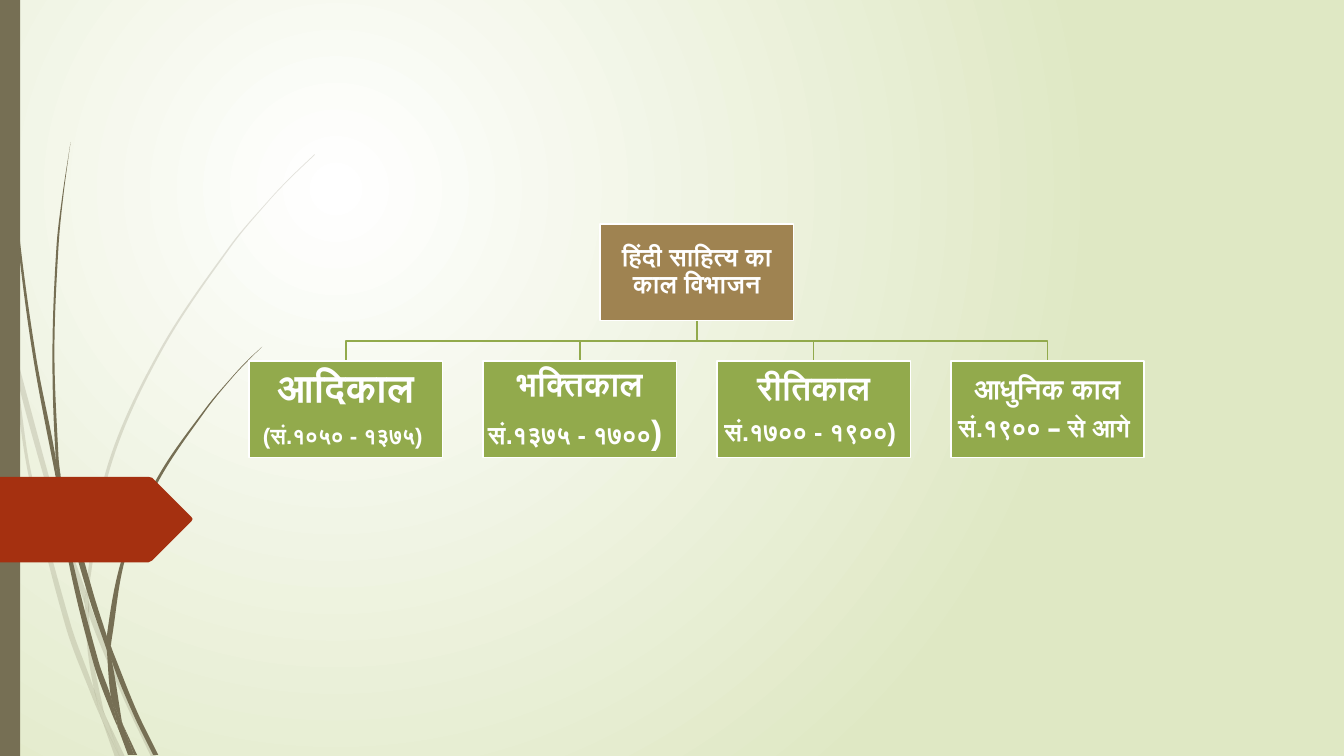
from dataclasses import dataclass

import pptx
import pptx.dml.color
import pptx.enum.lang
import pptx.enum.shapes
import pptx.enum.text
import pptx.oxml.ns
import pptx.util
from lxml import etree

Point = tuple[int, int]
PX = 9144
BOX_W, BOX_H, BOX_STEP = 192, 96, 232
OLIVE, GREEN, BROWN, RED, WHITE = "766F54", "92AA4C", "9F8351", "A53010", "FFFFFF"
qn = pptx.oxml.ns.qn


@dataclass
class Blade:
    left: list[Point]
    right: list[Point]


@dataclass
class Run:
    text: str
    size: int


@dataclass
class Box:
    x: int
    y: int
    color: str
    inset: int
    lines: list[list[Run]]


def px(n: float) -> int:
    return pptx.util.Emu(round(n * PX))


def rgb(color: str) -> pptx.dml.color.RGBColor:
    return pptx.dml.color.RGBColor.from_string(color)


def paint(sp, color: str, opacity: int = 100) -> None:
    sp.shadow.inherit = False
    sp.fill.solid()
    sp.fill.fore_color.rgb = rgb(color)
    sp.line.fill.background()
    if opacity < 100:
        clr = sp.element.spPr.find(".//" + qn("a:srgbClr"))
        etree.SubElement(clr, qn("a:alpha"), val=str(opacity * 1000))


def add_outline(s, points: list[Point], close: bool = True):
    first, *rest = [(px(x), px(y)) for x, y in points]
    builder = s.shapes.build_freeform(*first)
    builder.add_line_segments(rest, close=close)
    return builder.convert_to_shape()


def controls(edge: list[Point]) -> list[tuple[complex, complex]]:
    """Give the two Bezier handles of each segment of a smooth edge."""
    z = [complex(*point) for point in edge]
    ends = [z[0], *z, z[-1]]
    slopes = [(b - a) / abs(b - a) for a, b in zip(ends, ends[2:])]
    return [(a + u * abs(b - a) / 3, b - v * abs(b - a) / 3)
            for a, b, u, v in zip(z, z[1:], slopes, slopes[1:])]


def add_blade(s, blade: Blade, opacity: int) -> None:
    back = blade.right[::-1]
    points = blade.left + back
    sp = add_outline(s, points)
    paint(sp, OLIVE, opacity)
    left = min(x for x, _ in points)
    top = min(y for _, y in points)
    handles = [*controls(blade.left), None, *controls(back)]
    for line, pair in zip(sp.element.findall(".//" + qn("a:lnTo")), handles):
        if pair:
            line.tag = qn("a:cubicBezTo")
            for i, h in enumerate(pair):
                pt = etree.Element(qn("a:pt"), x=str(px(h.real - left)),
                                   y=str(px(h.imag - top)))
                line.insert(i, pt)


def add_elbow(s, points: list[Point]) -> None:
    sp = add_outline(s, points, close=False)
    sp.shadow.inherit = False
    sp.fill.background()
    sp.line.color.rgb = rgb(GREEN)
    sp.line.width = pptx.util.Pt(1.25)


def add_rect(s, x: int, y: int, w: int, h: int, color: str):
    sp = s.shapes.add_shape(pptx.enum.shapes.MSO_SHAPE.RECTANGLE,
                            px(x), px(y), px(w), px(h))
    paint(sp, color)
    return sp


def add_box(s, box: Box) -> None:
    sp = add_rect(s, box.x, box.y, BOX_W, BOX_H, box.color)
    sp.line.color.rgb = rgb(WHITE)
    sp.line.width = pptx.util.Pt(1.25)
    tf = sp.text_frame
    tf.word_wrap = True
    tf.vertical_anchor = pptx.enum.text.MSO_ANCHOR.MIDDLE
    tf.margin_left = tf.margin_right = tf.margin_top = tf.margin_bottom = px(box.inset)
    for i, runs in enumerate(box.lines):
        p = tf.add_paragraph() if i else tf.paragraphs[0]
        p.alignment = pptx.enum.text.PP_ALIGN.CENTER
        p.line_spacing = 0.9
        p.space_after = pptx.util.Pt(round(0.35 * max(run.size for run in runs), 1))
        p.font.name = "Arial"
        p.font.bold = True
        p.font.color.rgb = rgb(WHITE)
        for run in runs:
            r = p.add_run()
            r.text = run.text
            r.font.size = pptx.util.Pt(run.size)
            r.font.language_id = pptx.enum.lang.MSO_LANGUAGE_ID.HINDI


def set_background(s) -> None:
    fill = s.background.fill
    fill.gradient()
    for stop, position, color in zip(fill.gradient_stops, (0, 1), (WHITE, "DFE8C4")):
        stop.position = position
        stop.color.rgb = rgb(color)
    grad = s.element.find(".//" + qn("a:gradFill"))
    grad.remove(grad.find(qn("a:lin")))
    circle = etree.SubElement(grad, qn("a:path"), {"path": "circle"})
    etree.SubElement(circle, qn("a:fillToRect"),
                     l="50000", t="50000", r="100000", b="100000")


PALE = [
    Blade([(0, 299), (10, 344), (11, 350)], [(0, 282), (9, 322), (11, 350)]),
    Blade([(14, 345), (17, 376), (58, 522), (84, 599)], [(14, 345), (62, 520), (85, 586)]),
    Blade([(88, 596), (88, 610), (123, 694), (150, 751)], [(88, 596), (92, 607), (127, 692), (155, 751)]),
    Blade([(105, 711), (119, 751)], [(105, 711), (124, 751)]),
    Blade([(11, 350), (28, 470), (65, 621), (92, 693), (101, 714)],
          [(11, 350), (17, 376), (31, 469), (70, 619), (93, 683), (99, 707), (101, 714)]),
    Blade([(84, 599), (87, 646), (93, 683), (96, 692), (105, 711)],
          [(84, 599), (88, 610), (91, 646), (103, 706), (105, 711)]),
    Blade([(312, 153), (289, 175), (268, 197), (228, 244), (158, 348), (107, 461), (85, 584), (88, 596)],
          [(312, 154), (290, 175), (268, 198), (229, 245), (160, 349), (110, 462), (88, 584), (88, 596)]),
    Blade([(101, 714), (114, 751)], [(101, 714), (119, 751)]),
    Blade([(85, 586), (84, 599), (88, 608)], [(85, 586), (88, 596), (88, 610)]),
    Blade([(93, 683), (99, 707), (101, 714), (119, 751)], [(93, 683), (96, 692), (105, 711), (119, 751)]),
]
DARK = [
    Blade([(3, 0), (4, 48), (7, 110), (17, 233), (33, 355), (56, 477), (57, 481)],
          [(4, 0), (5, 48), (8, 109), (19, 232), (36, 355), (55, 453), (57, 481)]),
    Blade([(60, 472), (64, 505), (88, 592), (106, 645)], [(60, 472), (93, 590), (106, 631)]),
    Blade([(110, 641), (111, 656), (132, 708), (152, 749)], [(110, 641), (113, 649), (136, 706), (157, 749)]),
    Blade([(57, 477), (68, 557), (93, 659), (111, 708), (117, 722)],
          [(57, 477), (64, 505), (72, 556), (98, 657), (110, 691), (116, 717), (117, 722)]),
    Blade([(70, 141), (62, 193), (56, 245), (52, 349), (55, 449), (60, 472)],
          [(70, 141), (63, 193), (58, 245), (54, 349), (58, 453), (60, 472)]),
    Blade([(122, 719), (133, 749)], [(122, 719), (136, 749)]),
    Blade([(55, 449), (57, 477), (64, 505)], [(55, 449), (60, 472), (64, 505)]),
    Blade([(260, 344), (245, 358), (231, 373), (204, 405), (156, 474), (122, 551), (106, 631), (110, 641)],
          [(260, 344), (245, 359), (231, 374), (205, 406), (158, 476), (125, 552), (111, 633), (110, 641)]),
    Blade([(117, 722), (127, 749)], [(117, 722), (131, 749)]),
    Blade([(106, 645), (110, 691), (116, 706), (122, 719)], [(106, 645), (111, 656), (121, 716), (122, 719)]),
    Blade([(106, 631), (106, 645), (111, 656)], [(106, 631), (110, 641), (111, 656)]),
    Blade([(110, 691), (116, 717), (117, 722), (130, 749)], [(110, 691), (116, 706), (122, 719), (133, 749)]),
]
ARROW = [(0, 473), (147, 473), (151, 474), (190, 513), (191, 515), (190, 517), (151, 556), (147, 558), (0, 558)]
ROOT = Box(595, 222, BROWN, 1, [[Run("हिंदी साहित्य का काल विभाजन", 18)]])
PERIODS = [
    (2, [[Run("आदिकाल", 28)], [Run("(सं.१०५० - १३७५) ", 16)]]),
    (2, [[Run("भक्तिकाल", 24)], [Run("सं.१३७५ - १७००", 18), Run(") ", 24)]]),
    (2, [[Run("रीतिकाल", 24)], [Run("सं.१७०० - १९००) ", 18)]]),
    (1, [[Run("आधुनिक काल", 20)], [Run("सं.१९०० – से आगे ", 18)]]),
]


def main() -> None:
    prs = pptx.Presentation()
    prs.slide_width, prs.slide_height = px(1333), px(750)
    s = prs.slides.add_slide(prs.slide_layouts[6])
    set_background(s)
    for blades, opacity in ((PALE, 20), (DARK, 100)):
        for blade in blades:
            add_blade(s, blade, opacity)
    add_rect(s, 0, 0, 20, 750, OLIVE)
    paint(add_outline(s, ARROW), RED)
    boxes = [Box(247 + i * BOX_STEP, 358, GREEN, *period) for i, period in enumerate(PERIODS)]
    root_x, rail_y = ROOT.x + BOX_W // 2, 338
    for box in reversed(boxes):
        x = box.x + BOX_W // 2
        add_elbow(s, [(root_x, ROOT.y + BOX_H), (root_x, rail_y), (x, rail_y), (x, box.y)])
    for box in [ROOT, *boxes]:
        add_box(s, box)
    prs.save("out.pptx")


if __name__ == "__main__":
    main()
